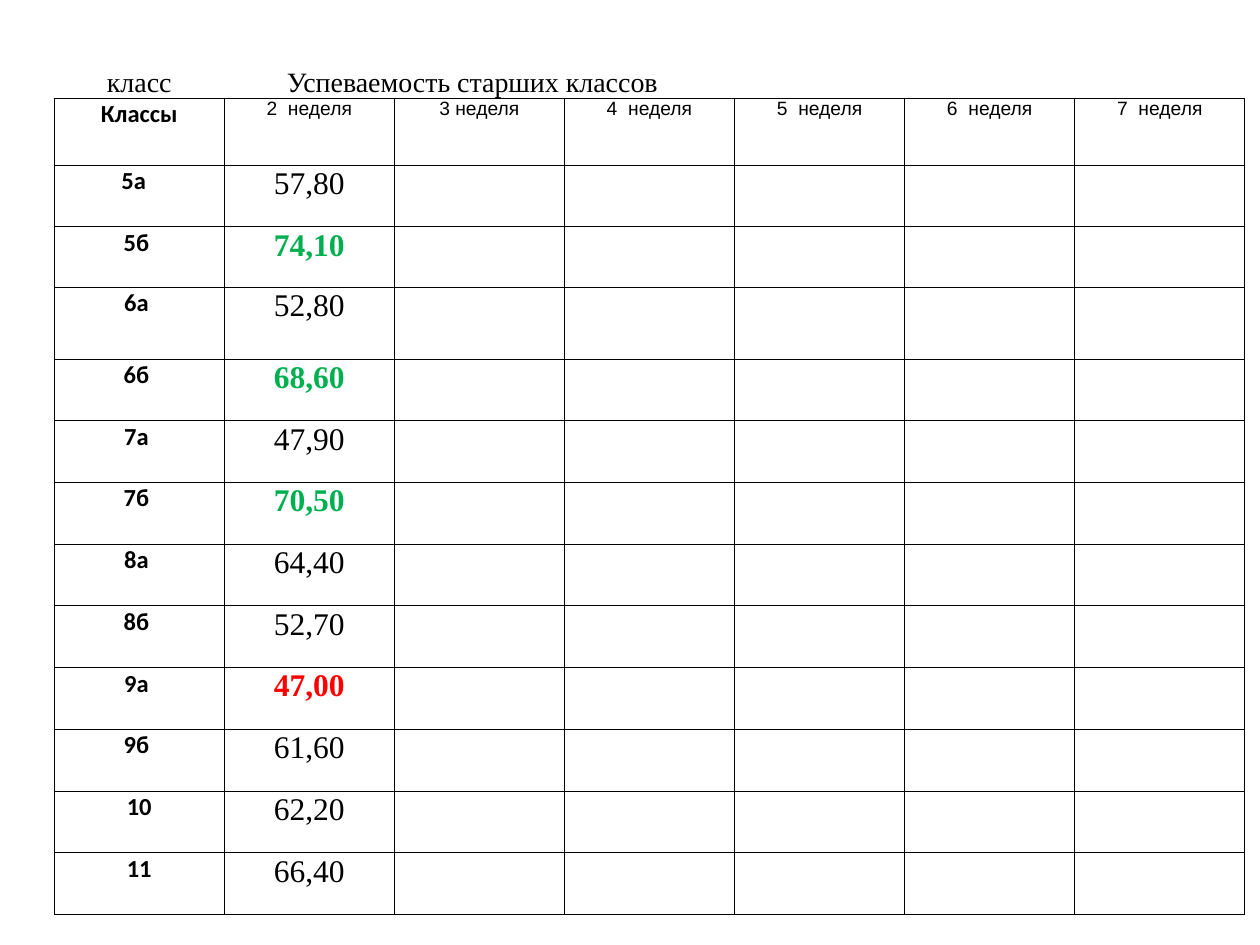
from dataclasses import dataclass

from lxml import etree
from pptx import Presentation
from pptx.dml.color import RGBColor
from pptx.enum import text
from pptx.oxml import ns
from pptx.util import Inches, Pt


@dataclass(frozen=True)
class Theme:
    ink: str = "000000"
    paper: str = "FFFFFF"
    high: str = "00B050"
    low: str = "FF0000"
    rule: float = 0.5
    caption: tuple = ("Times New Roman", 16)
    label: tuple = ("Calibri", 14)
    week: tuple = ("Arial", 11)
    score: tuple = ("Times New Roman", 18)


theme = Theme()
TIGHT = (0.01, 0.01, 0.01, 0)
ROOMY = (0.07, 0, 0.07, 0)
WEEKS = ["2  неделя", "3 неделя", "4  неделя", "5  неделя", "6  неделя", "7  неделя"]
SCORES = [
    ("5а  ", "57,80"), ("5б ", "74,10"), ("6а ", "52,80"), ("6б ", "68,60"),
    ("7а ", "47,90"), ("7б ", "70,50"), ("8а ", "64,40"), ("8б ", "52,70"),
    ("9а ", "47,00"), ("9б ", "61,60"), ("10", "62,20"), ("11", "66,40"),
]
HIGHLIGHTS = {"74,10": theme.high, "68,60": theme.high, "70,50": theme.high, "47,00": theme.low}
ROW_HEIGHTS = [0.49, 0.53, 0.49, 0.48, 0.57] + [0.49] * 9
COLUMN_WIDTH = 1.35
FILLED_COLUMNS = 5


def write(cell, wording, style, bold=False, color=theme.ink, insets=TIGHT, spacing=0):
    for side, inset in zip(("left", "top", "right", "bottom"), insets):
        setattr(cell, f"margin_{side}", Inches(inset))
    paragraph = cell.text_frame.paragraphs[0]
    paragraph_format = {
        "alignment": text.PP_ALIGN.CENTER,
        "space_before": Pt(spacing),
        "space_after": Pt(spacing),
    }
    for name, value in paragraph_format.items():
        setattr(paragraph, name, value)
    run = paragraph.add_run()
    run.text = wording
    family, size = style
    for name, value in {"name": family, "size": Pt(size), "bold": bold}.items():
        setattr(run.font, name, value)
    run.font.color.rgb = RGBColor.from_string(color)


def draw_borders(cell, sides):
    """Rule the given sides, a string of the letters L, R, T and B in that order."""
    properties = cell._tc.get_or_add_tcPr()
    for side in sides:
        line = etree.SubElement(properties, ns.qn(f"a:ln{side}"), w=str(Pt(theme.rule)))
        fill = etree.SubElement(line, ns.qn("a:solidFill"))
        etree.SubElement(fill, ns.qn("a:srgbClr"), val=theme.ink)


prs = Presentation()
prs.slide_width, prs.slide_height = Inches(10), Inches(7.5)
slide = prs.slides.add_slide(prs.slide_layouts[6])

column_count = len(WEEKS) + 1
grades = slide.shapes.add_table(
    len(ROW_HEIGHTS), column_count, Inches(0.43), Inches(0.29),
    Inches(COLUMN_WIDTH * column_count), Inches(sum(ROW_HEIGHTS)),
).table
grades.first_row = grades.horz_banding = False
for column in grades.columns:
    column.width = Inches(COLUMN_WIDTH)
for row, height in zip(grades.rows, ROW_HEIGHTS):
    row.height = Inches(height)

for row_index, row in enumerate(grades.rows):
    for column_index, cell in enumerate(row.cells):
        draw_borders(cell, "LRTB" if row_index else "B")
        if row_index and column_index < FILLED_COLUMNS:
            cell.fill.solid()
            cell.fill.fore_color.rgb = RGBColor.from_string(theme.paper)
        else:
            cell.fill.background()

grades.cell(0, 1).merge(grades.cell(0, 3))
for column_index, caption in enumerate(["класс", "Успеваемость старших классов  "]):
    caption_cell = grades.cell(0, column_index)
    write(caption_cell, caption, theme.caption)
    caption_cell.vertical_anchor = text.MSO_ANCHOR.BOTTOM

write(grades.cell(1, 0), "Классы", theme.label, bold=True)
for column_index, week in enumerate(WEEKS, start=1):
    write(grades.cell(1, column_index), week, theme.week, insets=ROOMY, spacing=3)

for row_index, (school_class, score) in enumerate(SCORES, start=2):
    write(grades.cell(row_index, 0), school_class, theme.label, bold=True)
    write(grades.cell(row_index, 1), score, theme.score,
          bold=score in HIGHLIGHTS, color=HIGHLIGHTS.get(score, theme.ink))

prs.save("out.pptx")
